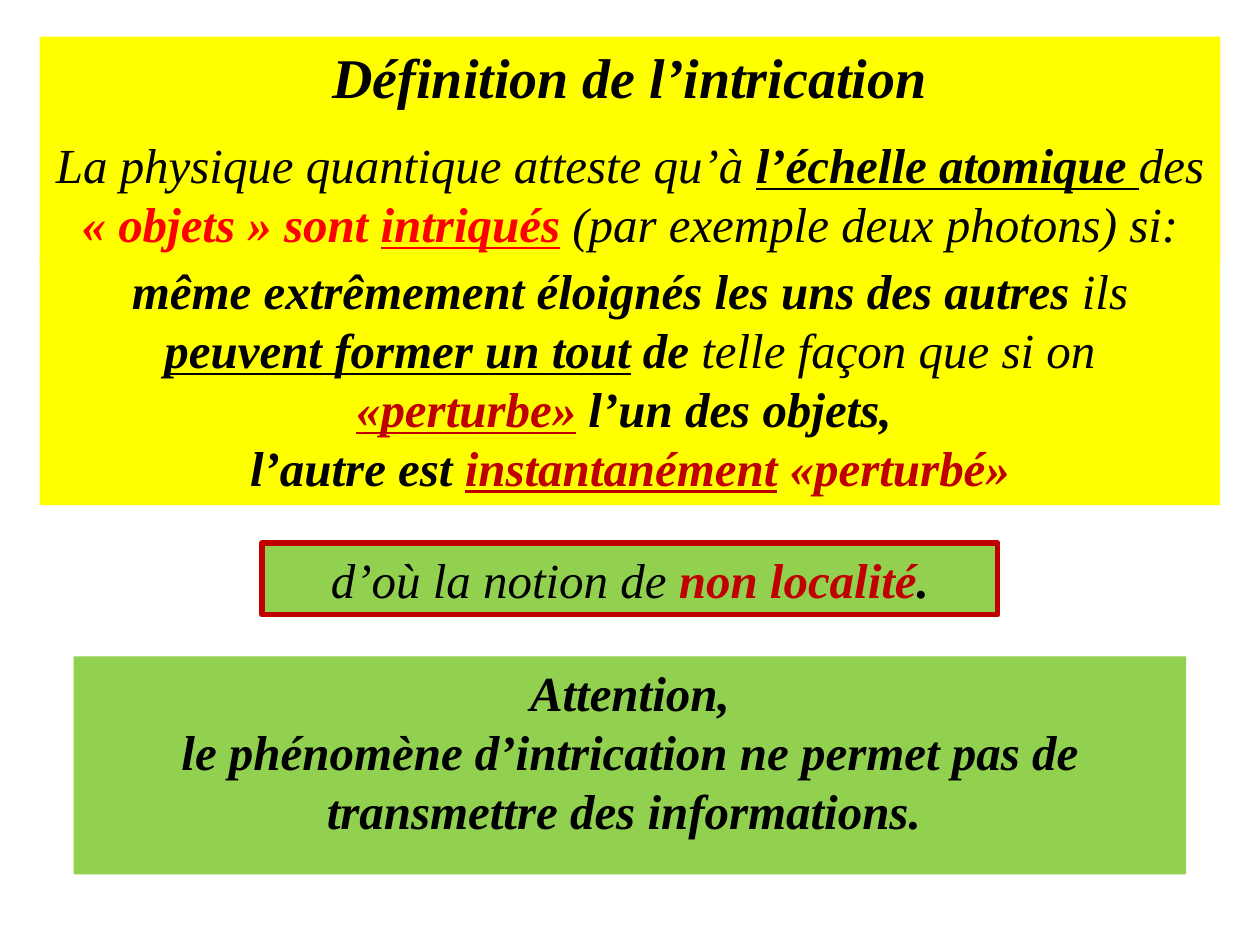
from dataclasses import dataclass

from pptx import Presentation
from pptx import util as u
from pptx.dml.color import RGBColor
from pptx.enum import shapes, text


@dataclass(frozen=True)
class Theme:
    font: str = "Times New Roman"
    heading_size: int = 32
    body_size: int = 28
    border_width: int = 3
    black: str = "000000"
    red: str = "FF0000"
    dark_red: str = "C00000"
    yellow: str = "FFFF00"
    green: str = "92D050"


THEME = Theme()
WIDTH, HEIGHT = 10, 7.5


@dataclass(frozen=True)
class Run:
    text: str
    bold: bool = True
    underline: bool = False
    color: str = THEME.black
    size: int = THEME.body_size


@dataclass(frozen=True)
class Panel:
    """A filled box, centred across the slide."""
    top: float
    width: float
    height: float
    fill: str
    paragraphs: list[list[Run]]
    border: str | None = None
    first_gap: int = 0


def add_run(paragraph, content: str, *, bold: bool, underline: bool,
            color: str, size: int) -> None:
    run = paragraph.add_run()
    run.text = content
    font = run.font
    font.name, font.size = THEME.font, u.Pt(size)
    font.bold, font.italic, font.underline = bold, True, underline
    font.color.rgb = RGBColor.from_string(color)


def format_panel(shape, panel: Panel) -> None:
    # Place and colour the box
    shape.left = u.Inches((WIDTH - panel.width) / 2)
    shape.top = u.Inches(panel.top)
    shape.width, shape.height = u.Inches(panel.width), u.Inches(panel.height)
    shape.fill.solid()
    shape.fill.fore_color.rgb = RGBColor.from_string(panel.fill)
    if panel.border:
        shape.line.color.rgb = RGBColor.from_string(panel.border)
        shape.line.width = u.Pt(THEME.border_width)
    else:
        shape.line.fill.background()

    # Write the text
    frame = shape.text_frame
    frame.word_wrap = True
    frame.auto_size = text.MSO_AUTO_SIZE.SHAPE_TO_FIT_TEXT
    frame.vertical_anchor = text.MSO_ANCHOR.TOP
    for index, runs in enumerate(panel.paragraphs):
        paragraph = frame.add_paragraph() if index else frame.paragraphs[0]
        paragraph.alignment = text.PP_ALIGN.CENTER
        if index == 0 and panel.first_gap:
            paragraph.space_after = u.Pt(panel.first_gap)
        for run in runs:
            add_run(paragraph, run.text, bold=run.bold, underline=run.underline,
                    color=run.color, size=run.size)


def add_panel(slide, panel: Panel) -> None:
    shape = slide.shapes.add_shape(shapes.MSO_SHAPE.RECTANGLE, 0, 0, 0, 0)
    shape.shadow.inherit = False
    format_panel(shape, panel)


DEFINITION = Panel(0.29, 9.37, 1.78, THEME.yellow, [
    [Run("Définition de l’intrication", size=THEME.heading_size)],
    [Run("La physique quantique atteste qu’à ", bold=False),
     Run("l’échelle atomique ", underline=True),
     Run("des ", bold=False),
     Run("« objets » sont ", color=THEME.red),
     Run("intriqués", underline=True, color=THEME.red),
     Run(" (par exemple deux photons) si:", bold=False)],
], first_gap=14)

PANELS = [
    Panel(2.02, 9.37, 1.99, THEME.yellow, [
        [Run("même extrêmement éloignés les uns des autres "),
         Run("ils ", bold=False),
         Run("peuvent former un tout", underline=True),
         Run(" de "),
         Run("telle façon que si on ", bold=False),
         Run("«perturbe»", underline=True, color=THEME.dark_red),
         Run(" l’un des objets, ")],
        [Run("l’autre est "),
         Run("instantanément", underline=True, color=THEME.dark_red),
         Run(" «perturbé»", color=THEME.dark_red)],
    ]),
    Panel(4.31, 5.84, 0.57, THEME.green, [
        [Run("d’où la notion de ", bold=False),
         Run("non localité", color=THEME.dark_red),
         Run(".")],
    ], border=THEME.dark_red),
    Panel(5.21, 8.83, 1.73, THEME.green, [
        [Run("Attention,")],
        [Run("le phénomène d’intrication ne permet pas de transmettre "
             "des informations. ")],
    ]),
]


def main() -> None:
    presentation = Presentation()
    presentation.slide_width = u.Inches(WIDTH)
    presentation.slide_height = u.Inches(HEIGHT)
    slide = presentation.slides.add_slide(presentation.slide_layouts[5])

    # Definition in the title placeholder, then the panels below it
    format_panel(slide.shapes.title, DEFINITION)
    for panel in PANELS:
        add_panel(slide, panel)
    presentation.save("out.pptx")


if __name__ == "__main__":
    main()
